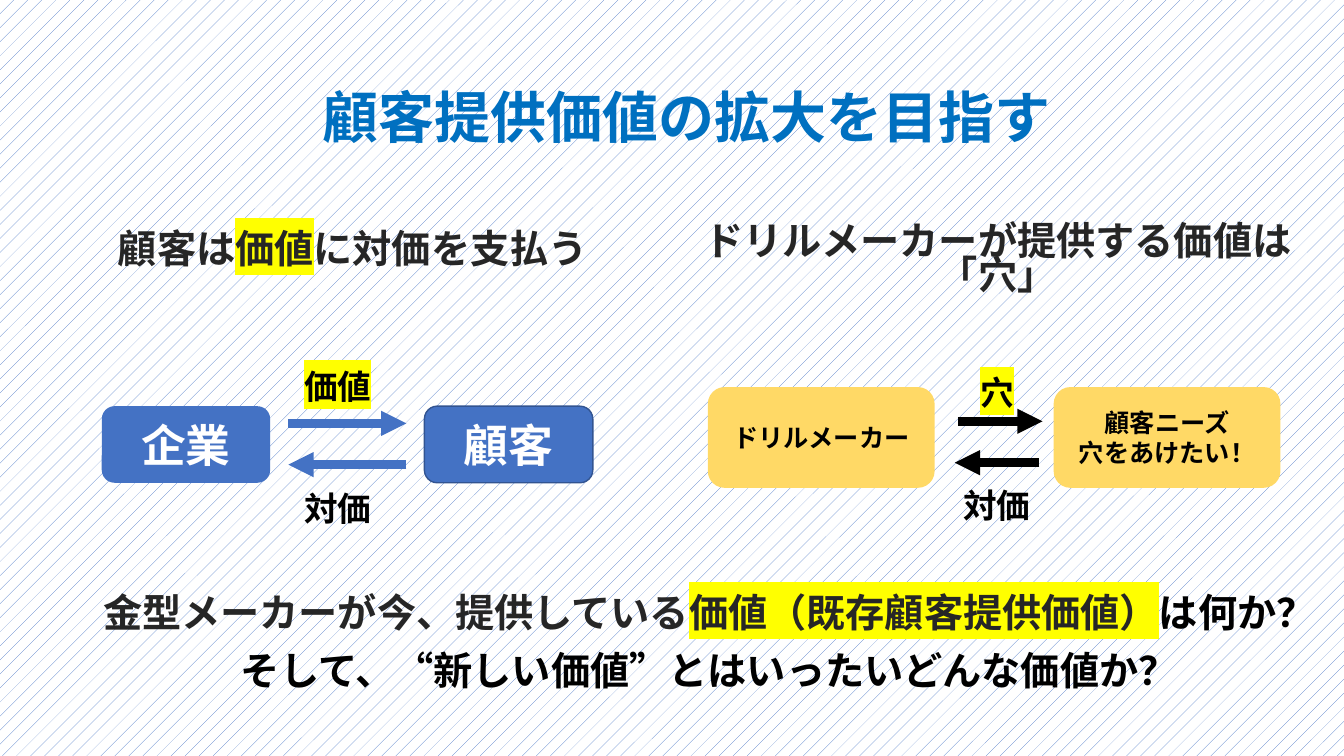
from lxml import etree
from pptx import Presentation
from pptx.dml.color import RGBColor
from pptx.enum.dml import MSO_PATTERN
from pptx.enum.shapes import MSO_CONNECTOR, MSO_SHAPE
from pptx.enum.text import MSO_ANCHOR, MSO_AUTO_SIZE, PP_ALIGN
from pptx.oxml.ns import qn
from pptx.util import Inches, Pt

BLUE = RGBColor(0x44, 0x72, 0xC4)
DARK_BLUE = RGBColor(0x32, 0x54, 0x91)
TITLE_BLUE = RGBColor(0x00, 0x70, 0xC0)
GOLD = RGBColor(0xFF, 0xD9, 0x66)
YELLOW = RGBColor(0xFF, 0xFF, 0x00)
CHARCOAL = RGBColor(0x26, 0x26, 0x26)
BLACK = RGBColor(0x00, 0x00, 0x00)
WHITE = RGBColor(0xFF, 0xFF, 0xFF)
BODY_FONT = "Noto Sans CJK JP"
LABEL_FONT = "Calibri"
TITLE_FONT = "TeX Gyre Adventor"


def highlight(r):
    """Mark a run in yellow."""
    mark = etree.SubElement(r._r.get_or_add_rPr(), qn("a:highlight"))
    etree.SubElement(mark, qn("a:srgbClr")).set("val", str(YELLOW))


def write(sp, paragraphs, size, font, align=PP_ALIGN.CENTER, spacing=None,
          anchor=MSO_ANCHOR.TOP, wrap=True):
    """Fill a shape with paragraphs, each a list of (text, colour, marked) runs."""
    tf = sp.text_frame
    tf.word_wrap = wrap
    tf.auto_size = MSO_AUTO_SIZE.NONE
    tf.vertical_anchor = anchor
    for i, runs in enumerate(paragraphs):
        p = tf.add_paragraph() if i else tf.paragraphs[0]
        p.alignment = align
        p.space_before = Pt(0)
        p.line_spacing = spacing
        p.font.size = Pt(size)
        p.font.bold = True
        p.font.name = font
        for text, color, marked in runs:
            r = p.add_run()
            r.text = text
            r.font.color.rgb = color
            if marked:
                highlight(r)


def place(sp, left, top, width, height):
    """Move and size a placeholder."""
    sp.left, sp.top = Inches(left), Inches(top)
    sp.width, sp.height = Inches(width), Inches(height)


def add_box(shapes, box, lines, size, fill, color, line=None):
    """Add a rounded box with centred lines of text."""
    sp = shapes.add_shape(MSO_SHAPE.ROUNDED_RECTANGLE, *map(Inches, box))
    sp.shadow.inherit = False
    sp.fill.solid()
    sp.fill.fore_color.rgb = fill
    if line is None:
        sp.line.fill.background()
    else:
        sp.line.color.rgb = line
        sp.line.width = Pt(1)
    write(sp, [[(text, color, False)] for text in lines], size, LABEL_FONT,
          anchor=MSO_ANCHOR.MIDDLE)


def add_arrow(shapes, start, end, y, color):
    """Add a thick horizontal arrow."""
    cn = shapes.add_connector(MSO_CONNECTOR.STRAIGHT, Inches(start), Inches(y),
                              Inches(end), Inches(y))
    cn.line.color.rgb = color
    cn.line.width = Pt(6)
    spPr = cn._element.spPr
    etree.SubElement(spPr.find(qn("a:ln")), qn("a:tailEnd")).set("type", "triangle")
    etree.SubElement(spPr, qn("a:effectLst"))


def add_text(shapes, box, paragraphs, size, font, **options):
    """Add a text box."""
    write(shapes.add_textbox(*map(Inches, box)), paragraphs, size, font, **options)


def add_company_exchange(slide):
    """Add the exchange between company and customer."""
    shapes = slide.shapes.add_group_shape().shapes
    add_box(shapes, (1.01, 4.03, 1.67, 0.76), ["企業"], 32, BLUE, WHITE)
    add_box(shapes, (4.21, 4.03, 1.67, 0.76), ["顧客"], 32, BLUE, WHITE, DARK_BLUE)
    add_arrow(shapes, 2.86, 4.03, 4.2, BLUE)
    add_arrow(shapes, 4.03, 2.86, 4.61, BLUE)
    add_text(shapes, (2.92, 3.58, 1.17, 0.5), [[("価値", BLACK, True)]], 24, LABEL_FONT,
             align=PP_ALIGN.LEFT)
    add_text(shapes, (2.92, 4.79, 0.92, 0.5), [[("対価", BLACK, False)]], 24, LABEL_FONT,
             align=PP_ALIGN.LEFT)


def add_drill_exchange(slide):
    """Add the exchange between drill maker and customer need."""
    shapes = slide.shapes.add_group_shape().shapes
    add_box(shapes, (7.02, 3.84, 2.25, 1), ["ドリルメーカー"], 18, GOLD, BLACK)
    add_box(shapes, (10.45, 3.84, 2.25, 1), ["顧客ニーズ", "穴をあけたい！"], 18, GOLD, BLACK)
    add_arrow(shapes, 9.5, 10.34, 4.18, BLACK)
    add_arrow(shapes, 10.31, 9.47, 4.59, BLACK)
    add_text(shapes, (9.53, 3.64, 0.72, 0.5), [[("穴", BLACK, True)]], 24, LABEL_FONT)
    add_text(shapes, (9.43, 4.76, 0.91, 0.5), [[("対価", BLACK, False)]], 24, LABEL_FONT)


def main():
    """Build the slide on customer value."""
    prs = Presentation()
    prs.slide_width, prs.slide_height = Inches(13.33), Inches(7.5)
    slide = prs.slides.add_slide(prs.slide_layouts.get_by_name("Comparison"))
    fill = slide.background.fill
    fill.patterned()
    fill.pattern = MSO_PATTERN.PERCENT_5
    fill.fore_color.rgb = BLUE
    fill.back_color.rgb = WHITE

    holders = {sp.placeholder_format.idx: sp for sp in slide.placeholders}
    for idx in (2, 4):
        holders[idx]._element.getparent().remove(holders[idx]._element)
    place(holders[0], 3.1, 0.77, 7.49, 0.77)
    write(holders[0], [[("顧客提供価値の拡大を目指す", TITLE_BLUE, False)]], 40, TITLE_FONT,
          align=PP_ALIGN.LEFT, wrap=False)
    place(holders[1], 0.42, 2.23, 6.16, 0.71)
    write(holders[1], [[("顧客は", CHARCOAL, False), ("価値", CHARCOAL, True),
                        ("に対価を支払う", CHARCOAL, False)]], 28, BODY_FONT, spacing=0.9)
    place(holders[3], 6.32, 2.22, 7.15, 0.71)
    write(holders[3], [[("ドリルメーカーが提供する価値は「穴」", CHARCOAL, False)]], 28,
          BODY_FONT, spacing=0.72)

    add_company_exchange(slide)
    add_drill_exchange(slide)
    add_text(slide.shapes, (0.82, 5.68, 12.43, 0.71),
             [[("金型メーカーが今、提供している", CHARCOAL, False),
               ("価値（既存顧客提供価値）", CHARCOAL, True), ("は何か？", BLACK, False)],
              [("そして、“新しい価値”とはいったいどんな価値か？", BLACK, False)]],
             28, BODY_FONT, spacing=1.23)
    prs.save("out.pptx")


if __name__ == "__main__":
    main()
